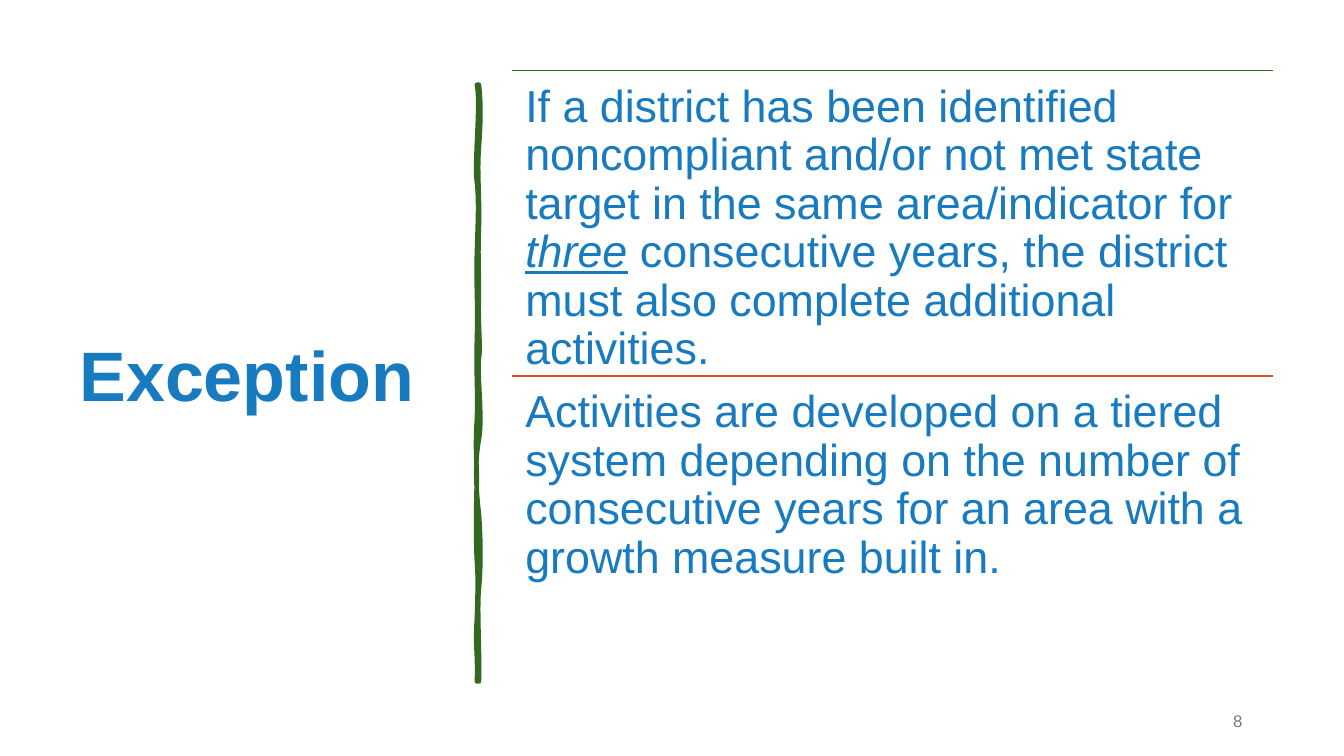
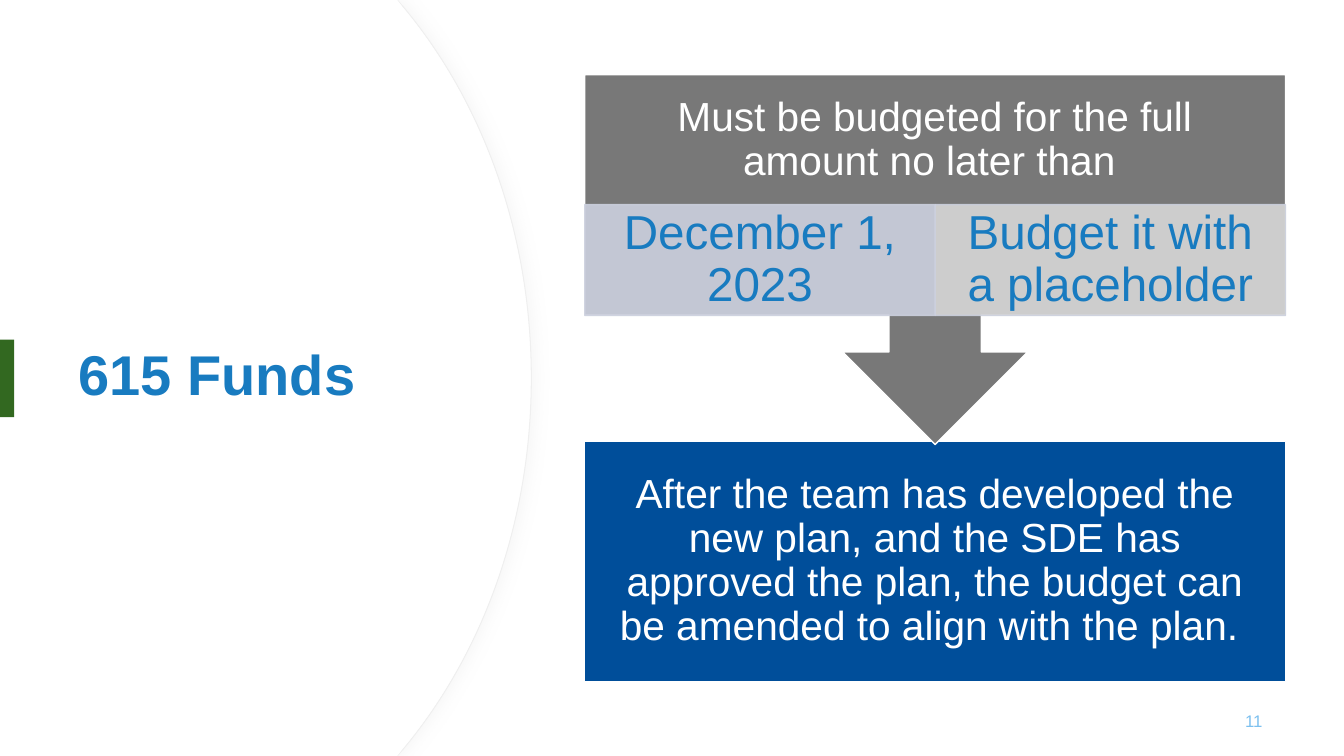
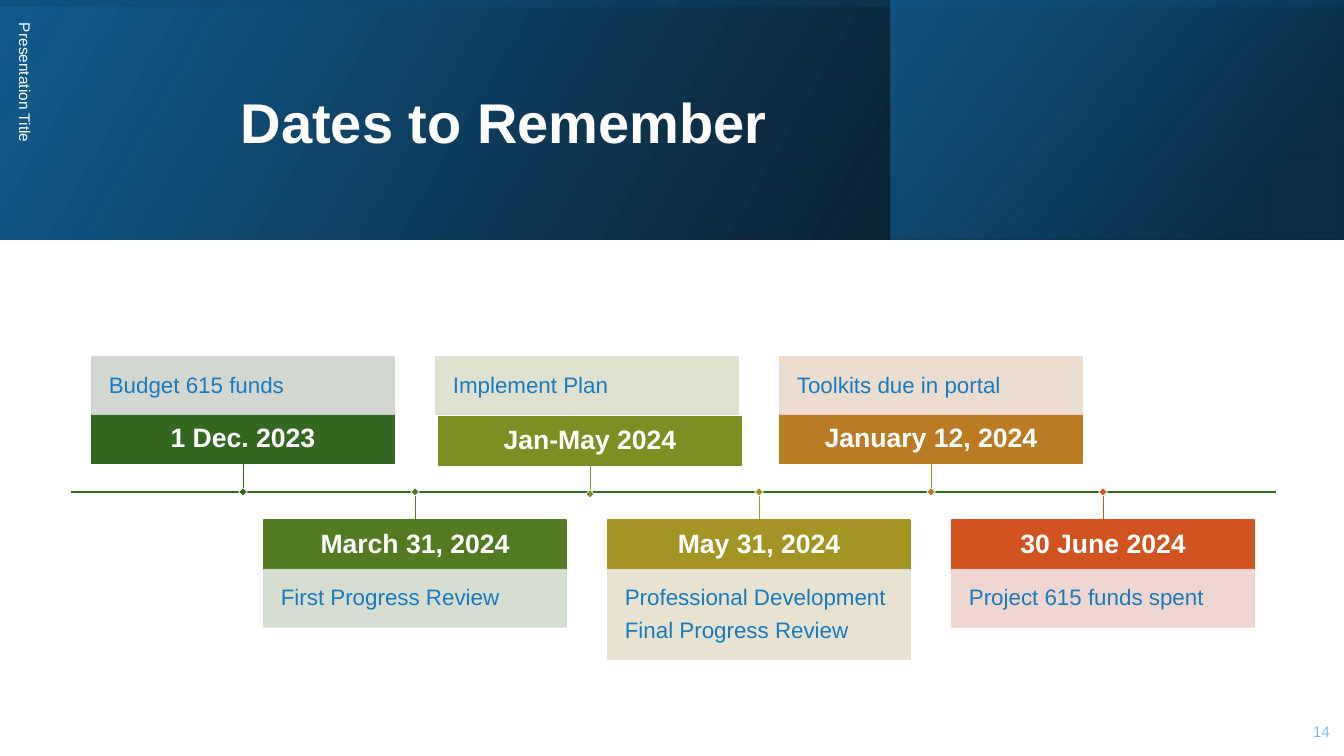
from dataclasses import dataclass

from lxml import etree
from pptx import Presentation, util as u
from pptx.dml.color import RGBColor
from pptx.enum import shapes, text
from pptx.oxml import ns


@dataclass(frozen=True)
class Theme:
    font: str = "Arial"
    white: str = "FFFFFF"
    blue: str = "187BC0"
    pale_blue: str = "7CC0EF"
    navy: str = "004E9A"
    band_blue: str = "125C90"
    green: str = "326820"
    orange: str = "D15420"
    gray: str = "787878"
    lavender: str = "CCD0DE"
    silver: str = "D7D7D7"
    title_large: float = 50
    title: float = 40
    emphasis: float = 34
    body: float = 32
    callout: float = 29
    date: float = 19
    detail: float = 16
    footer: float = 12
    footer_small: float = 11


THEME = Theme()
ALIGN = text.PP_ALIGN
ANCHOR = text.MSO_ANCHOR
MIDDLE, TOP = ANCHOR.MIDDLE, ANCHOR.TOP
RECTANGLE = shapes.MSO_SHAPE.RECTANGLE


# Drawing helpers
def set_alpha(color_element, percent):
    etree.SubElement(color_element, ns.qn("a:alpha"), val=str(percent * 1000))


def style(shape, fill, line=None, width=1, alpha=None):
    shape.fill.solid()
    shape.fill.fore_color.rgb = RGBColor.from_string(fill)
    if line:
        shape.line.color.rgb = RGBColor.from_string(line)
        shape.line.width = u.Pt(width)
    else:
        shape.line.fill.background()
    shape.shadow.inherit = False
    if alpha:
        for color in shape._element.spPr.iter(ns.qn("a:srgbClr")):
            set_alpha(color, alpha)
    return shape


def add_box(slide, box, fill, line=None, width=1, alpha=None, kind=RECTANGLE, rotation=0):
    shape = slide.shapes.add_shape(kind, *map(u.Inches, box))
    shape.rotation = rotation
    return style(shape, fill, line, width, alpha)


def write(shape, paragraphs, size, color, bold=False, align=ALIGN.LEFT,
          anchor=MIDDLE, insets=(0.1, 0.05), spacing=0.9, after=0):
    """Each paragraph is a string, or a list of (words, emphasised) runs."""
    frame = shape.text_frame
    frame.word_wrap = True
    frame.vertical_anchor = anchor
    frame.margin_left = frame.margin_right = u.Inches(insets[0])
    frame.margin_top = frame.margin_bottom = u.Inches(insets[1])
    for index, content in enumerate(paragraphs):
        paragraph = frame.add_paragraph() if index else frame.paragraphs[0]
        paragraph.alignment = align
        paragraph.line_spacing = spacing
        paragraph.space_after = u.Pt(after)
        font = paragraph.font
        font.name, font.size, font.bold = THEME.font, u.Pt(size), bold
        font.color.rgb = RGBColor.from_string(color)
        runs = [(content, False)] if isinstance(content, str) else content
        for words, emphasised in runs:
            run = paragraph.add_run()
            run.text = words
            if emphasised:
                run.font.italic = run.font.underline = True
    return shape


def add_text(slide, box, paragraphs, size, color, **options):
    shape = slide.shapes.add_textbox(*map(u.Inches, box))
    return write(shape, paragraphs, size, color, **options)


def add_line(slide, start, end, color, width=1):
    line = slide.shapes.add_connector(
        shapes.MSO_CONNECTOR.STRAIGHT, *map(u.Inches, (*start, *end)))
    line.line.color.rgb = RGBColor.from_string(color)
    line.line.width = u.Pt(width)
    etree.SubElement(line._element.spPr, ns.qn("a:effectLst"))
    return line


def add_outline(slide, start, segments, fill, line=None, width=1):
    """A segment of two numbers is a line, one of six numbers a cubic curve."""
    builder = slide.shapes.build_freeform(*map(u.Inches, start))
    for segment in segments:
        lengths = [u.Inches(value) for value in segment]
        builder.add_line_segments(list(zip(lengths[::2], lengths[1::2])), close=False)
    shape = builder.convert_to_shape()

    # Join each curve's three points into one curve, then close the outline
    outline = next(shape._element.spPr.iter(ns.qn("a:path")))
    steps = iter(outline.findall(ns.qn("a:lnTo")))
    for segment in segments:
        group = [next(steps) for _ in range(len(segment) // 2)]
        if len(group) == 3:
            curve = etree.Element(ns.qn("a:cubicBezTo"))
            outline.replace(group[0], curve)
            for step in group:
                curve.append(step[0])
            for step in group[1:]:
                outline.remove(step)
    etree.SubElement(outline, ns.qn("a:close"))
    return style(shape, fill, line, width)


# Shared slide parts
def add_title(slide, box, words, size=THEME.title, color=THEME.blue):
    add_text(slide, box, [words], size, color, bold=True)


def add_page_number(slide, box, number, size=THEME.footer, color=THEME.pale_blue):
    add_text(slide, box, [number], size, color, align=ALIGN.RIGHT, spacing=1)


# Slide 1: a title, a hand-drawn rule and two statements
def add_brush_rule(slide):
    add_outline(slide, (4.75, 0.84), [
        (4.77, 1.02, 4.77, 1.19, 4.75, 1.46), (4.73, 1.73, 4.76, 1.95, 4.75, 2.26),
        (4.74, 2.57, 4.75, 2.62, 4.75, 2.94), (4.74, 3.25, 4.77, 3.42, 4.75, 3.56),
        (4.73, 3.7, 4.79, 4.14, 4.75, 4.36), (4.71, 4.57, 4.72, 4.84, 4.75, 5.1),
        (4.77, 5.36, 4.77, 5.64, 4.75, 5.84), (4.73, 6.03, 4.76, 6.5, 4.75, 6.76),
        (4.74, 6.76, 4.73, 6.76, 4.73, 6.76), (4.74, 6.46, 4.71, 6.44, 4.73, 6.13),
        (4.74, 5.83, 4.74, 5.7, 4.73, 5.57), (4.72, 5.44, 4.72, 4.95, 4.73, 4.77),
        (4.73, 4.59, 4.71, 4.45, 4.73, 4.15), (4.74, 3.86, 4.72, 3.73, 4.73, 3.35),
        (4.74, 2.98, 4.72, 2.81, 4.73, 2.5), (4.74, 2.18, 4.75, 2, 4.73, 1.81),
        (4.7, 1.63, 4.77, 1.04, 4.73, 0.84)], THEME.green, THEME.green, 3.25)


def add_statements(slide, box, statements):
    left, top, width, height = box
    row_height = height / len(statements)
    for index, (content, color) in enumerate(statements):
        y = top + index * row_height
        add_line(slide, (left, y), (left + width, y), color)
        add_text(slide, (left, y, width, row_height), [content], THEME.body,
                 THEME.blue, anchor=TOP, insets=(0.13, 0.13))


def build_exception(slide):
    add_title(slide, (0.69, 0.7, 3.74, 6.11), "Exception", THEME.title_large)
    add_brush_rule(slide)
    add_page_number(slide, (9.42, 6.95, 3, 0.4), "8", color=THEME.gray)
    add_statements(slide, (5.08, 0.7, 7.55, 6.06), [
        ([("If a district has been identified noncompliant and/or not met state "
           "target in the same area/indicator for ", False),
          ("three", True),
          (" consecutive years, the district must also complete additional "
           "activities.", False)], THEME.green),
        ("Activities are developed on a tiered system depending on the number of "
         "consecutive years for an area with a growth measure built in.",
         THEME.orange)])


# Slide 2: a rounded title panel and a two-step flow
def add_round_panel(slide):
    for right, line in ((5.27, "EFEFEF"), (5.26, None)):
        bend = right - 1.26
        panel = add_outline(slide, (0, 0), [
            (3.94, 0), (bend, 0.08),
            (right - 0.48, 1.02, right, 2.32, right, 3.75),
            (right, 5.18, right - 0.48, 6.48, bend, 7.42),
            (3.94, 7.5), (0, 7.5)], THEME.white, line, 0.75)
        if line:
            effects = panel._element.spPr.find(ns.qn("a:effectLst"))
            shadow = etree.SubElement(
                effects, ns.qn("a:outerShdw"), blurRad=str(u.Pt(10)),
                dist=str(u.Pt(3)), dir="0", algn="l", rotWithShape="0")
            set_alpha(etree.SubElement(shadow, ns.qn("a:srgbClr"), val="D9D9D9"), 20)


def add_budget_flow(slide, box):
    left, top, width, height = box
    centered = dict(align=ALIGN.CENTER)

    # Second step
    result = add_box(slide, (left, top + 3.64, width, height - 3.64),
                     THEME.navy, THEME.white)
    write(result, ["After the team has developed the new plan, and the SDE has approved "
                   "the plan, the budget can be amended to align with the plan. "],
          THEME.callout, THEME.white, insets=(0.23, 0.23), **centered)

    # First step, pointing down
    add_box(slide, (left, top, width, 3.67), THEME.gray, THEME.white,
            kind=shapes.MSO_SHAPE.UP_ARROW_CALLOUT, rotation=180)
    add_text(slide, (left, top, width, 1.3),
             ["Must be budgeted for the full amount no later than "],
             THEME.callout, THEME.white, insets=(0.23, 0.23), **centered)

    # Its two halves
    halves = (("December 1, 2023", THEME.lavender),
              ("Budget it with a placeholder", THEME.silver))
    for index, (words, fill) in enumerate(halves):
        half = add_box(slide, (left + index * width / 2, top + 1.29, width / 2, 1.1),
                       fill, THEME.lavender, alpha=90)
        write(half, [words], THEME.emphasis, THEME.blue, insets=(0.26, 0.05), **centered)


def build_funds(slide):
    add_round_panel(slide)
    add_title(slide, (0.68, 1.27, 3.94, 4.95), "615 Funds")
    add_box(slide, (0, 3.37, 0.14, 0.77), THEME.green)
    add_page_number(slide, (9.62, 6.95, 3, 0.4), "11")
    add_budget_flow(slide, (5.8, 0.74, 6.95, 6.02))


# Slide 3: a gradient band over a timeline
def add_gradient(slide, box, stops, angle, rotation=0):
    """Stops are (position %, colour, alpha %); the angle runs clockwise."""
    shape = add_box(slide, box, THEME.white, rotation=rotation)
    shape._element.spPr.xfrm.set("flipH", "1")
    shape.fill.gradient()
    shape.fill.gradient_angle = 360 - angle
    for stop, (position, color, _) in zip(shape.fill.gradient_stops, stops):
        stop.position = position / 100
        stop.color.rgb = RGBColor.from_string(color)
    colors = list(shape._element.spPr.iter(ns.qn("a:srgbClr")))
    for color, (_, _, alpha) in zip(colors, stops):
        set_alpha(color, alpha)


def add_header_band(slide, width, height):
    add_gradient(slide, (0, 0, width, height),
                 [(0, "000000", 96), (100, THEME.band_blue, 100)], 330)
    add_gradient(slide, (8.83, 0, 4.49, height),
                 [(19, "0C3D60", 68), (100, THEME.blue, 48)], 320)
    offset = (width - height) / 2
    add_gradient(slide, (offset, -offset, height, width),
                 [(23, THEME.band_blue, 16), (99, "000000", 45)], 350, rotation=270)


def add_event(slide, left, axis, above, date, details, color, tint, shift=(0, 0)):
    width, date_height, stem, marker = 3, 0.49, 0.28, 0.06
    detail_height = 0.57 + 0.32 * (len(details) - 1)
    date_top = axis - stem - date_height if above else axis + stem
    detail_top = date_top - detail_height if above else date_top + date_height
    shift_x, shift_y = shift

    # Date and details
    date_box = add_box(slide, (left + shift_x, date_top + shift_y, width, date_height),
                       color, color)
    write(date_box, [date], THEME.date, THEME.white, bold=True,
          align=ALIGN.CENTER, insets=(0.11, 0.11))
    detail_box = add_box(slide, (left, detail_top, width, detail_height),
                         tint, tint, alpha=90)
    write(detail_box, details, THEME.detail, THEME.blue, anchor=TOP,
          insets=(0.17, 0.17), after=5.6)

    # Stem and marker
    x, y = left + shift_x + width / 2, axis + shift_y
    edge = y - stem if above else y + stem
    line = add_line(slide, (x, edge), (x, y), color, 0.5)
    line.begin_connect(date_box, 2 if above else 0)
    add_box(slide, (x - marker / 2, y - marker / 2, marker, marker),
            color, THEME.white, 0.5, rotation=45)


def add_timeline(slide, left, axis, width, events):
    add_line(slide, (left, axis), (left + width, axis), THEME.green)
    first, last = left + 0.21, left + width - 3.22
    step = (last - first) / (len(events) - 1)
    for index, event in enumerate(events):
        add_event(slide, first + index * step, axis, index % 2 == 0, *event)


def build_dates(slide):
    add_header_band(slide, 13.33, 2.38)
    add_title(slide, (2.29, 0.38, 9.85, 1.72), "Dates to Remember", color=THEME.white)
    label = add_text(slide, (-2, 2.18, 4.5, 0.4), ["Presentation Title"],
                     THEME.footer_small, THEME.white, spacing=1)
    label.rotation = 90
    add_page_number(slide, (12.8, 7.06, 0.49, 0.4), "14", THEME.footer_small)
    add_timeline(slide, 0.7, 4.88, 11.96, [
        ("1 Dec. 2023", ["Budget 615 funds"], THEME.green, "CED4CD"),
        ("March 31, 2024", ["First Progress Review"], "527B22", "D2DACC"),
        ("Jan-May 2024", ["Implement Plan"], "7D8F23", "DCDFCB", (0.03, 0.02)),
        ("May 31, 2024", ["Professional Development", "Final Progress Review"],
         "A49423", "E5E1CB"),
        ("January 12, 2024", ["Toolkits due in portal"], "BA7B22", "EADACC"),
        ("30 June 2024", ["Project 615 funds spent"], THEME.orange, "EED2CD")])


def main():
    presentation = Presentation()
    presentation.slide_width = u.Inches(13.33)
    presentation.slide_height = u.Inches(7.5)
    for build in (build_exception, build_funds, build_dates):
        build(presentation.slides.add_slide(presentation.slide_layouts[6]))
    presentation.save("out.pptx")


if __name__ == "__main__":
    main()
